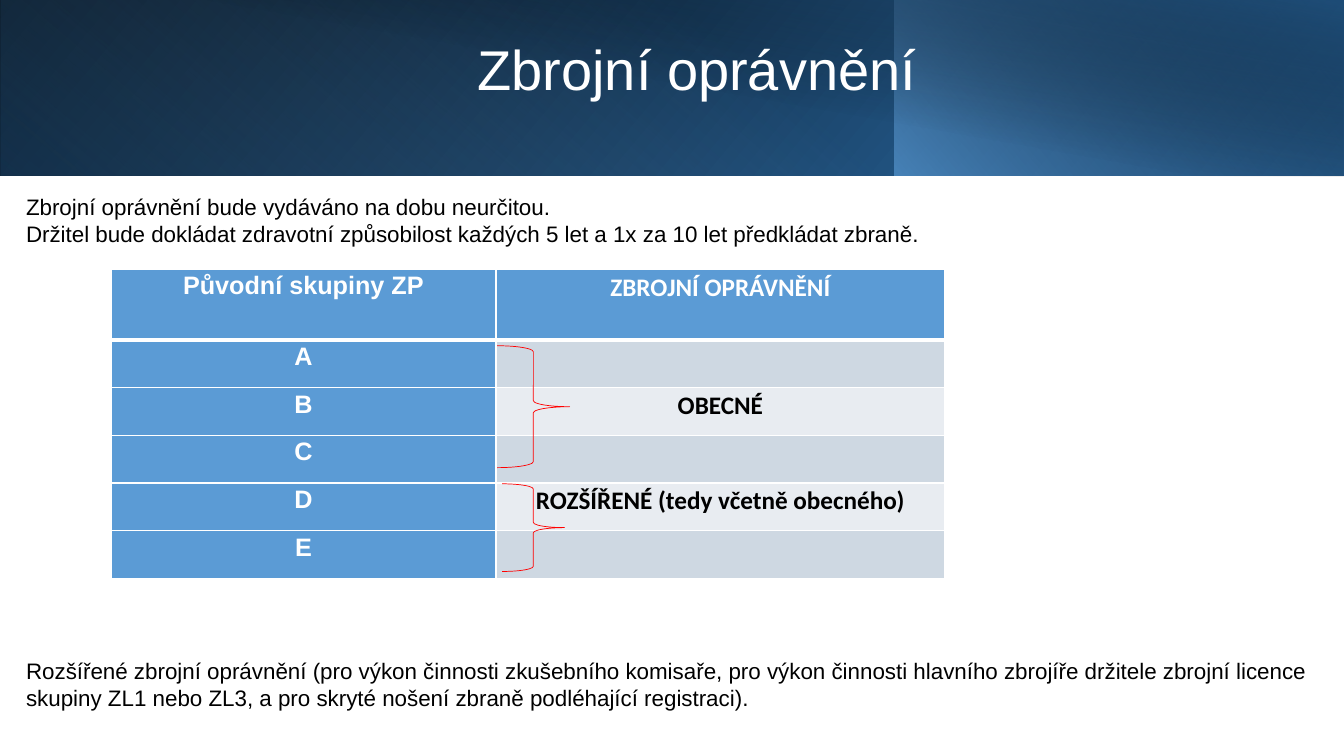
"""Build the slide on firearm authorisations: banner, notes and a table of groups."""
from pptx import Presentation
from pptx.dml.color import RGBColor
from pptx.enum.shapes import MSO_SHAPE
from pptx.enum.text import MSO_ANCHOR, MSO_AUTO_SIZE, PP_ALIGN
from pptx.oxml import parse_xml
from pptx.oxml.ns import nsdecls
from pptx.util import Inches, Pt

WHITE, BLACK, BLUE, RED = "FFFFFF", "000000", "5B9BD5", "FF0000"
BANDS = ["CED8E2", "E8ECF1"]

BANNER = [
    {"at": (0, 0, 13.33, 1.74), "flip": True, "turn": 0, "angle": 140,
     "stops": [(0, BLACK, 100), (100, "2E75B6", 100)]},
    {"at": (0, 0, 8.88, 1.74), "flip": True, "turn": 180, "angle": 230,
     "stops": [(20, BLUE, 0), (100, "1F4E79", 55)]},
    {"at": (8.87, 0, 4.46, 1.74), "flip": True, "turn": 0, "angle": 220,
     "stops": [(0, BLUE, 66), (100, BLACK, 30)]},
    {"at": (0.5, 0, 12.83, 1.75), "flip": False, "turn": 0, "angle": 280,
     "stops": [(50, BLACK, 0), (99, "1F4E79", 52)]},
]
TITLE = "Zbrojní oprávnění"
VALIDITY = [
    "Zbrojní oprávnění bude vydáváno na dobu neurčitou.",
    "Držitel bude dokládat zdravotní způsobilost každých 5 let a 1x za 10 let předkládat zbraně.",
]
EXTENDED = [
    "Rozšířené zbrojní oprávnění (pro výkon činnosti zkušebního komisaře, pro výkon činnosti "
    "hlavního zbrojíře držitele zbrojní licence skupiny ZL1 nebo ZL3, a pro skryté nošení "
    "zbraně podléhající registraci).",
]
GROUPS = [
    ("Původní skupiny ZP", "ZBROJNÍ OPRÁVNĚNÍ"),
    ("A", ""),
    ("B", "OBECNÉ"),
    ("C", ""),
    ("D", "ROZŠÍŘENÉ (tedy včetně obecného)"),
    ("E", ""),
]
COLUMN_WIDTHS = [3.82, 4.45]
HEADER_HEIGHT, ROW_HEIGHT = 0.7, 0.474
BRACES = [(4.93, 3.43, 0.72, 1.21), (4.98, 4.8, 0.62, 0.87)]


def color(code):
    return RGBColor.from_string(code)


def place(box):
    return [Inches(length) for length in box]


def add_run(paragraph, text, size, font, code, bold=False):
    run = paragraph.add_run()
    run.text = text
    run.font.size, run.font.name, run.font.bold = Pt(size), font, bold
    run.font.color.rgb = color(code)


def add_banner_layer(slide, layer):
    panel = slide.shapes.add_shape(MSO_SHAPE.RECTANGLE, *place(layer["at"]))
    panel.shadow.inherit = False
    panel.line.fill.background()
    panel.rotation = layer["turn"]
    properties = panel._element.spPr
    if layer["flip"]:
        properties.xfrm.set("flipH", "1")
    stops = "".join(
        f'<a:gs pos="{spot * 1000}"><a:srgbClr val="{code}">'
        f'<a:alpha val="{alpha * 1000}"/></a:srgbClr></a:gs>'
        for spot, code, alpha in layer["stops"])
    properties.prstGeom.addnext(parse_xml(
        f'<a:gradFill {nsdecls("a")} rotWithShape="1"><a:gsLst>{stops}</a:gsLst>'
        f'<a:lin ang="{layer["angle"] * 60000}" scaled="0"/></a:gradFill>'))


def add_text(slide, box, lines, size, code, align):
    frame = slide.shapes.add_textbox(*place(box)).text_frame
    frame.word_wrap = True
    for number, line in enumerate(lines):
        paragraph = frame.add_paragraph() if number else frame.paragraphs[0]
        paragraph.alignment = align
        add_run(paragraph, line, size, "Arial", code)
    return frame


def set_borders(cell, top, bottom):
    edges = [("lnL", 1), ("lnR", 1), ("lnT", top), ("lnB", bottom)]
    for position, (edge, width) in enumerate(edges):
        cell._tc.get_or_add_tcPr().insert(position, parse_xml(
            f'<a:{edge} {nsdecls("a")} w="{width * 12700}"><a:solidFill>'
            f'<a:srgbClr val="{WHITE}"/></a:solidFill></a:{edge}>'))


def add_groups(slide):
    height = HEADER_HEIGHT + ROW_HEIGHT * (len(GROUPS) - 1)
    table = slide.shapes.add_table(
        len(GROUPS), 2, *place((1.1, 2.67, sum(COLUMN_WIDTHS), height))).table
    for column, width in zip(table.columns, COLUMN_WIDTHS):
        column.width = Inches(width)
    for r, group in enumerate(GROUPS):
        table.rows[r].height = Inches(ROW_HEIGHT if r else HEADER_HEIGHT)
        for c, label in enumerate(group):
            cell = table.cell(r, c)
            in_body = r > 0 and c > 0
            cell.fill.solid()
            cell.fill.fore_color.rgb = color(BANDS[(r - 1) % 2] if in_body else BLUE)
            set_borders(cell, 3 if r == 1 else 1, 3 if r == 0 else 1)
            if label:
                cell.margin_left = cell.margin_right = Inches(0.08)
                cell.margin_top = cell.margin_bottom = 0
                paragraph = cell.text_frame.paragraphs[0]
                paragraph.alignment, paragraph.line_spacing = PP_ALIGN.CENTER, 1.1
                add_run(paragraph, label, 18, "Calibri" if c else "Arial",
                        BLACK if in_body else WHITE, True)


def add_brace(slide, box):
    brace = slide.shapes.add_shape(MSO_SHAPE.RIGHT_BRACE, *place(box))
    brace.shadow.inherit = False
    brace.fill.background()
    brace.line.color.rgb = color(RED)
    brace.line.width = Pt(0.5)


def main():
    deck = Presentation()
    deck.slide_width, deck.slide_height = Inches(13.33), Inches(7.5)
    slide = deck.slides.add_slide(deck.slide_layouts[6])
    for layer in BANNER:
        add_banner_layer(slide, layer)
    title = add_text(slide, (1.5, 0.32, 10.82, 0.8), [TITLE], 40, WHITE, PP_ALIGN.CENTER)
    title.vertical_anchor = MSO_ANCHOR.MIDDLE
    title.paragraphs[0].line_spacing = 0.9
    validity = add_text(slide, (0.16, 1.87, 9.84, 0.64), VALIDITY, 16, BLACK, PP_ALIGN.JUSTIFY)
    add_groups(slide)
    for box in BRACES:
        add_brace(slide, box)
    extended = add_text(slide, (0.16, 6.47, 13.25, 0.64), EXTENDED, 16, BLACK, PP_ALIGN.LEFT)
    for note in (validity, extended):
        note.auto_size = MSO_AUTO_SIZE.SHAPE_TO_FIT_TEXT
    deck.save("out.pptx")


if __name__ == "__main__":
    main()
